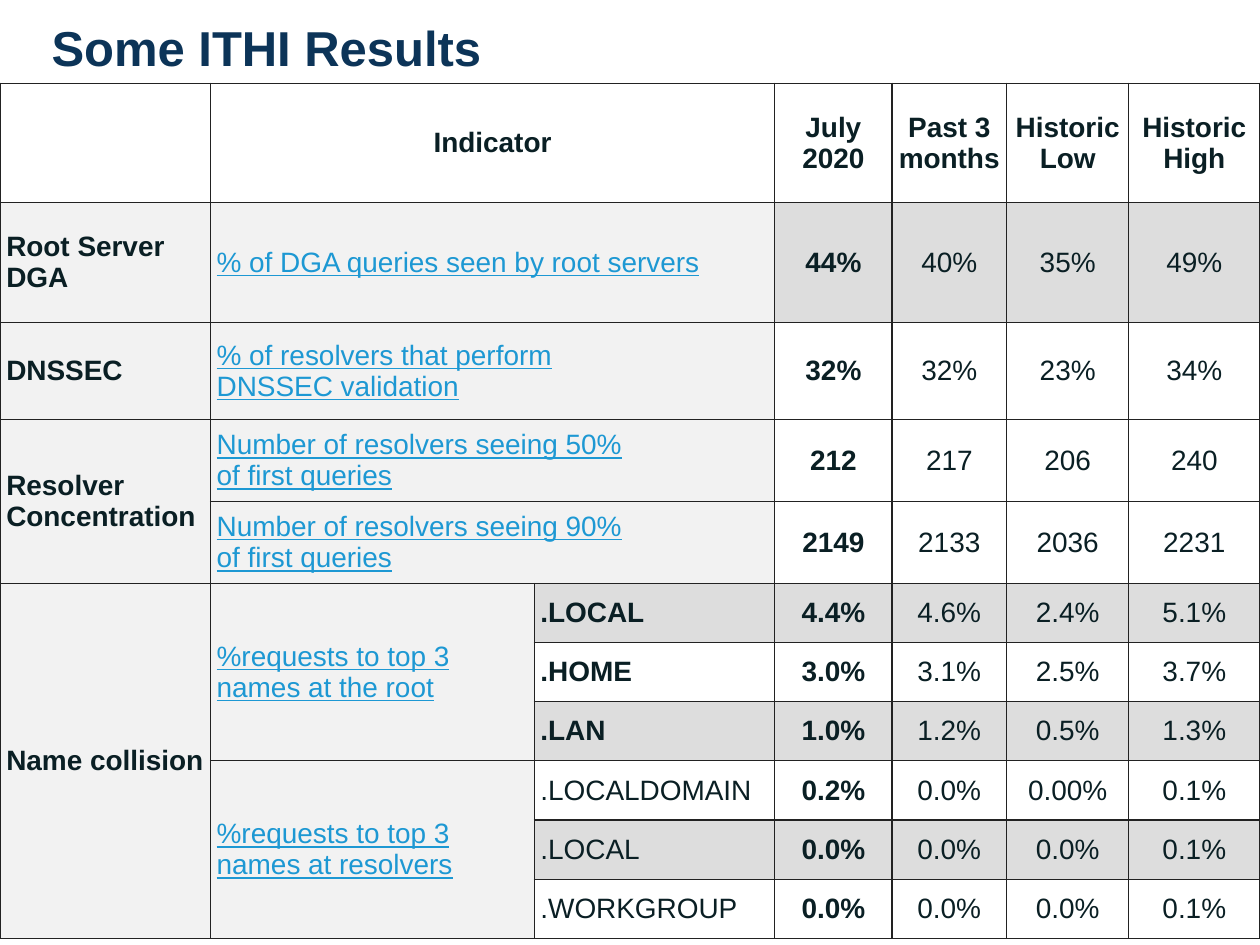
"""Build the slide with the table of ITHI results."""
import dataclasses

import lxml.etree
import pptx
import pptx.dml.color
import pptx.enum.text
import pptx.oxml.ns
import pptx.table
import pptx.text.text
import pptx.util

Inches = pptx.util.Inches
Pt = pptx.util.Pt
RGBColor = pptx.dml.color.RGBColor
Align = pptx.enum.text.PP_ALIGN
Anchor = pptx.enum.text.MSO_ANCHOR

NAVY = RGBColor(0x0C, 0x34, 0x58)
INK = RGBColor(0x0A, 0x1F, 0x24)
BLUE = RGBColor(0x1D, 0x98, 0xD3)
PALE = RGBColor(0xF2, 0xF2, 0xF2)
GRAY = RGBColor(0xDD, 0xDD, 0xDD)
LINE = RGBColor(0x22, 0x22, 0x22)

WIDTHS = [1.67, 2.57, 1.91, 0.93, 0.91, 0.97, 1.04]
HEIGHTS = [0.95, 0.95, 0.77, 0.65, 0.65] + [0.47] * 6
SHADED = {1, 5, 7, 9}


@dataclasses.dataclass
class Style:
    color: RGBColor = INK
    bold: bool = False
    under: bool = False
    size: float = 16


@dataclasses.dataclass
class Label:
    row: int
    text: str
    down: int = 1
    across: int = 1


PLAIN = Style()
STRONG = Style(bold=True)
LINK = Style(BLUE, under=True)
TITLE = Style(NAVY, bold=True, size=28)

GROUPS = [
    Label(1, "Root Server DGA"),
    Label(2, "DNSSEC"),
    Label(3, "Resolver Concentration", down=2),
    Label(5, "Name collision", down=6),
]
LINKS = [
    Label(1, "% of DGA queries seen by root servers", across=2),
    Label(2, "% of resolvers that perform\nDNSSEC validation", across=2),
    Label(3, "Number of resolvers seeing 50%\nof first queries", across=2),
    Label(4, "Number of resolvers seeing 90%\nof first queries", across=2),
    Label(5, "%requests to top 3 names at the root", down=3),
    Label(8, "%requests to top 3 names at resolvers", down=3),
]
NAMES = [".LOCAL", ".HOME", ".LAN", ".LOCALDOMAIN", ".LOCAL", ".WORKGROUP"]
HEADS = ["July 2020", "Past 3 months", "Historic Low", "Historic High"]
VALUES = [
    ["44%", "40%", "35%", "49%"],
    ["32%", "32%", "23%", "34%"],
    ["212", "217", "206", "240"],
    ["2149", "2133", "2036", "2231"],
    ["4.4%", "4.6%", "2.4%", "5.1%"],
    ["3.0%", "3.1%", "2.5%", "3.7%"],
    ["1.0%", "1.2%", "0.5%", "1.3%"],
    ["0.2%", "0.0%", "0.00%", "0.1%"],
    ["0.0%", "0.0%", "0.0%", "0.1%"],
    ["0.0%", "0.0%", "0.0%", "0.1%"],
]


def write(para: pptx.text.text._Paragraph, text: str, style: Style) -> None:
    """Add each line of the text as a styled run."""
    for index, line in enumerate(text.split("\n")):
        if index:
            para.add_line_break()
        run = para.add_run()
        run.text = line
        font = run.font
        font.name = "Arial"
        font.size = Pt(style.size)
        font.bold = style.bold
        font.underline = style.under
        font.color.rgb = style.color


def fill(cell: pptx.table._Cell, text: str, style: Style,
         align: Align = Align.LEFT) -> None:
    """Write aligned text in a cell."""
    para = cell.text_frame.paragraphs[0]
    para.alignment = align
    write(para, text, style)


def paint(cell: pptx.table._Cell, color: RGBColor | None) -> None:
    """Set the margins, fill and borders of a cell."""
    cell.vertical_anchor = Anchor.MIDDLE
    cell.margin_left = cell.margin_right = Inches(0.05)
    cell.margin_top = cell.margin_bottom = Inches(0.05)
    if color is None:
        cell.fill.background()
    else:
        cell.fill.solid()
        cell.fill.fore_color.rgb = color
    props = cell._tc.get_or_add_tcPr()
    qn = pptx.oxml.ns.qn
    for index, side in enumerate(["lnL", "lnR", "lnT", "lnB"]):
        edge = lxml.etree.Element(qn(f"a:{side}"), w=str(Pt(0.75)))
        solid = lxml.etree.SubElement(edge, qn("a:solidFill"))
        lxml.etree.SubElement(solid, qn("a:srgbClr"), val=str(LINE))
        props.insert(index, edge)


def shade(row: int, col: int) -> RGBColor | None:
    """Choose the fill for a place in the grid."""
    if row == 0:
        return None
    if col == 0 or col == 1 or (col == 2 and row < 5):
        return PALE
    return GRAY if row in SHADED else None


def place(grid: pptx.table.Table, col: int, labels: list[Label],
          style: Style) -> None:
    """Write labels down a column, merging the cells they span."""
    for item in labels:
        cell = grid.cell(item.row, col)
        if item.down > 1 or item.across > 1:
            last = grid.cell(item.row + item.down - 1, col + item.across - 1)
            cell.merge(last)
        fill(cell, item.text, style)


def main() -> None:
    """Draw the title and the table."""
    deck = pptx.Presentation()
    deck.slide_width, deck.slide_height = Inches(10), Inches(7.5)
    slide = deck.slides.add_slide(deck.slide_layouts[6])

    box = slide.shapes.add_textbox(
        Inches(0.41), Inches(0.05), Inches(8.76), Inches(0.49))
    frame = box.text_frame
    frame.word_wrap = True
    frame.margin_left = frame.margin_right = 0
    frame.margin_top, frame.margin_bottom = Inches(0.09), 0
    write(frame.paragraphs[0], "Some ITHI Results", TITLE)

    grid = slide.shapes.add_table(
        len(HEIGHTS), len(WIDTHS), 0, Inches(0.66),
        Inches(sum(WIDTHS)), Inches(sum(HEIGHTS))).table
    grid.first_row = grid.horz_banding = False
    for col, width in zip(grid.columns, WIDTHS):
        col.width = Inches(width)
    for row, height in zip(grid.rows, HEIGHTS):
        row.height = Inches(height)
    for row in range(len(HEIGHTS)):
        for col in range(len(WIDTHS)):
            paint(grid.cell(row, col), shade(row, col))

    grid.cell(0, 1).merge(grid.cell(0, 2))
    fill(grid.cell(0, 1), "Indicator", STRONG, Align.CENTER)
    place(grid, 0, GROUPS, STRONG)
    place(grid, 1, LINKS, LINK)
    for row, name in enumerate(NAMES, 5):
        fill(grid.cell(row, 2), name, STRONG if row < 8 else PLAIN)
    for row, line in enumerate([HEADS] + VALUES):
        for col, text in enumerate(line, 3):
            style = STRONG if row == 0 or col == 3 else PLAIN
            fill(grid.cell(row, col), text, style, Align.CENTER)

    deck.save("out.pptx")


if __name__ == "__main__":
    main()
